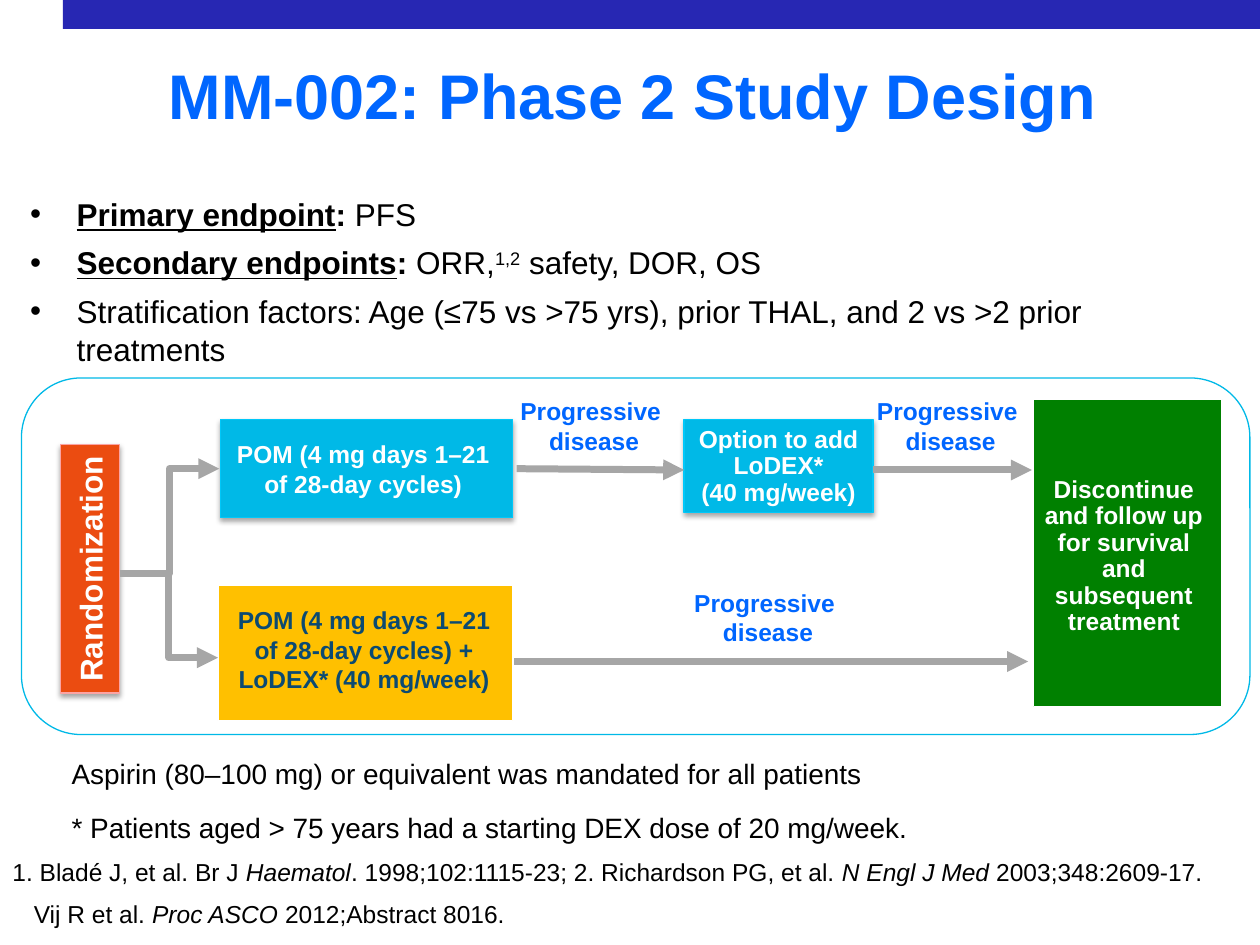
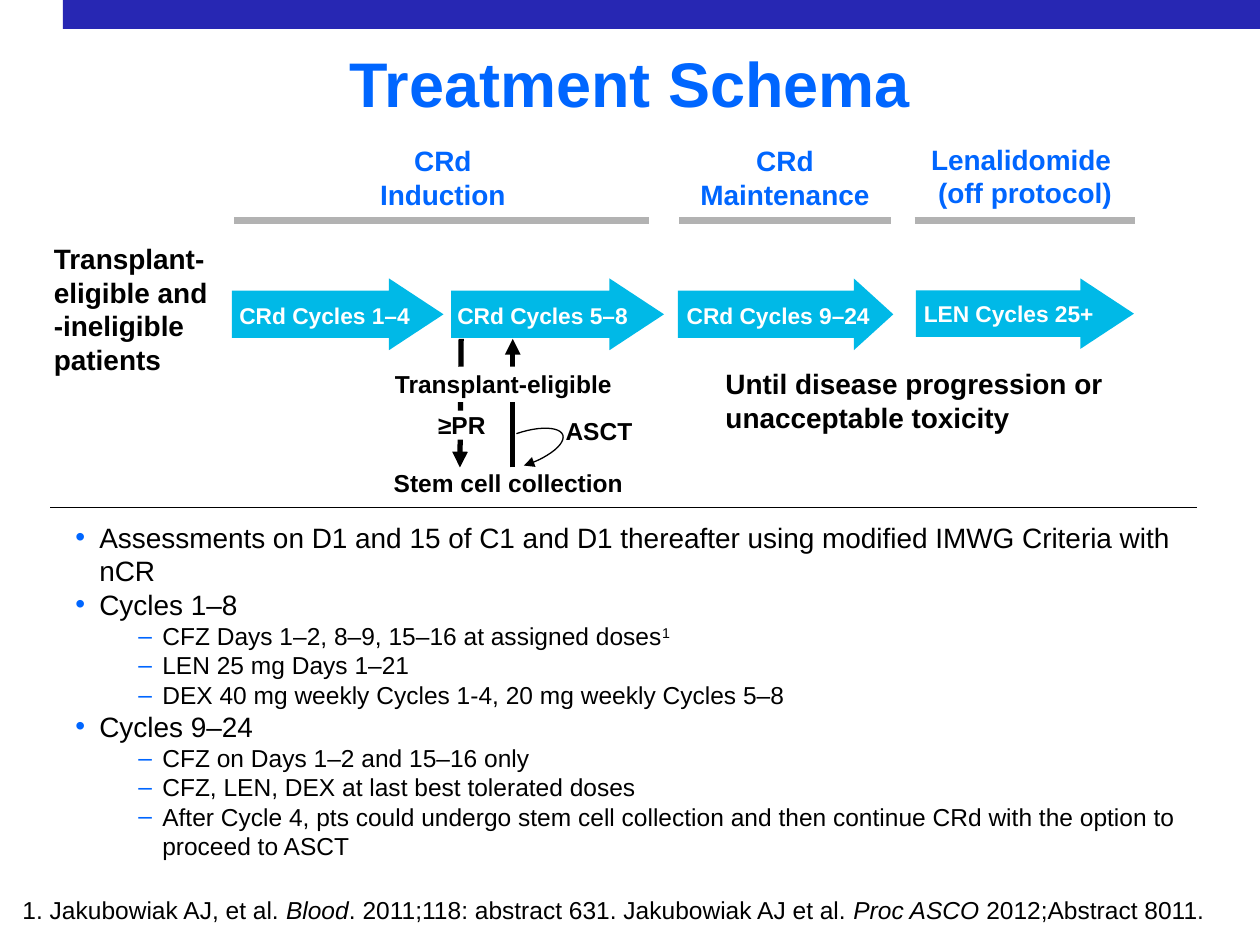
"""Build two slides on myeloma study designs."""
from lxml.etree import SubElement
from pptx import Presentation
from pptx.dml.color import RGBColor
from pptx.enum.shapes import MSO_CONNECTOR, MSO_SHAPE
from pptx.enum.text import MSO_ANCHOR, MSO_AUTO_SIZE, PP_ALIGN
from pptx.oxml.ns import qn
from pptx.util import Pt

SCALE = 9144
COLORS = {
    "band": "2727B3", "blue": "0066FF", "black": "000000", "white": "FFFFFF",
    "cyan": "00B9E7", "edge": "00C8F9", "red": "EB4C11", "pink": "FBA4A4",
    "green": "008000", "gold": "FFC000", "navy": "0B4A72", "gray": "A6A6A6",
    "rule": "B2B2B2",
}
ALIGNS = {"left": PP_ALIGN.LEFT, "center": PP_ALIGN.CENTER}
ANCHORS = {"top": MSO_ANCHOR.TOP, "middle": MSO_ANCHOR.MIDDLE, "bottom": MSO_ANCHOR.BOTTOM}
MARKS = {"b": "bold", "u": "underline", "i": "italic"}
PAD = (10, 5, 10, 5)


def emu(*sizes):
    """Turn px lengths into EMU."""
    return [size * SCALE for size in sizes]


def hue(name):
    """Look up a colour by name."""
    return RGBColor.from_string(COLORS[name])


class Deck:
    """Hold the style and the current slide."""

    def __init__(self):
        """Start an empty deck."""
        self.prs = Presentation()
        self.prs.slide_width, self.prs.slide_height = emu(1000, 750)
        self.slide = None

    def page(self, title, at):
        """Add a slide with its band and title."""
        self.slide = self.prs.slides.add_slide(self.prs.slide_layouts[5])
        self.shape((50, 0, 950, 23), "band")
        head = self.slide.shapes.title
        head.left, head.top, head.width, head.height = emu(*at)
        self.words(head, [title], size=36, color="blue", bold=True,
                   align="center", anchor="middle")

    def words(self, shape, paras, size=14, color="black", bold=False, align="left",
              anchor="top", pad=PAD, wrap=True, gap=0, lead=None, marks=None):
        """Fill a shape with paragraphs of text or marked runs."""
        frame = shape.text_frame
        sides = ("margin_left", "margin_top", "margin_right", "margin_bottom")
        form = dict(zip(sides, emu(*pad)), word_wrap=wrap,
                    auto_size=MSO_AUTO_SIZE.NONE, vertical_anchor=ANCHORS[anchor])
        for key, value in form.items():
            setattr(frame, key, value)
        for num, runs in enumerate(paras):
            para = frame.add_paragraph() if num else frame.paragraphs[0]
            level, glyph, left, hang, tint, points = marks[num] if marks else (0, "", 0, 0, "", size)
            if marks:
                self.bullet(para, glyph, left, hang, tint)
            form = {"level": level, "alignment": ALIGNS[align], "line_spacing": lead,
                    "space_before": Pt(gap if num else 0), "space_after": Pt(0)}
            for key, value in form.items():
                setattr(para, key, value)
            for text, flags in [(runs, "")] if isinstance(runs, str) else runs:
                self.run(para, text, flags, points, color, bold)

    def run(self, para, text, flags, size, color, bold):
        """Add one run, broken at each newline."""
        for num, part in enumerate(text.split("\n")):
            if num:
                para.add_line_break()
            run = para.add_run()
            run.text = part
            form = {"name": "Arial", "size": Pt(size), "bold": bold}
            form.update({MARKS[flag]: True for flag in flags if flag in MARKS})
            for key, value in form.items():
                setattr(run.font, key, value)
            run.font.color.rgb = hue(color)
            if "^" in flags:
                run._r.get_or_add_rPr().set("baseline", "30000")

    def bullet(self, para, glyph, left, hang, tint):
        """Set a hanging indent and its bullet."""
        props = para._p.get_or_add_pPr()
        props.set("marL", str(left * SCALE))
        props.set("indent", str(-hang * SCALE))
        if glyph:
            shade = SubElement(props, qn("a:buClr"))
            SubElement(shade, qn("a:srgbClr"), val=COLORS[tint])
            SubElement(props, qn("a:buFont"), typeface="Arial")
            SubElement(props, qn("a:buChar"), char=glyph)

    def text(self, at, paras, **form):
        """Add a text box."""
        self.words(self.slide.shapes.add_textbox(*emu(*at)), paras, **form)

    def shape(self, at, fill=None, edge=None, kind=MSO_SHAPE.RECTANGLE, adjust=(),
              shade=False, paras=None, **form):
        """Add a preset shape, with text if given."""
        item = self.slide.shapes.add_shape(kind, *emu(*at))
        item.shadow.inherit = False
        if fill:
            item.fill.solid()
            item.fill.fore_color.rgb = hue(fill)
        else:
            item.fill.background()
        if edge:
            item.line.color.rgb = hue(edge)
            item.line.width = Pt(0.75)
        else:
            item.line.fill.background()
        for num, value in enumerate(adjust):
            item.adjustments[num] = value
        if shade:
            self.shade(item)
        if paras:
            self.words(item, paras, **form)
        return item

    def shade(self, item):
        """Drop a soft shadow below a shape."""
        effects = item.element.spPr.find(qn("a:effectLst"))
        drop = SubElement(effects, qn("a:outerShdw"), blurRad=str(Pt(3.1)),
                          dist=str(Pt(1.8)), dir="5400000", rotWithShape="0")
        tone = SubElement(drop, qn("a:srgbClr"), val=COLORS["black"])
        SubElement(tone, qn("a:alpha"), val="35000")

    def line(self, ends, color, width, arrow=False, kind=MSO_CONNECTOR.STRAIGHT):
        """Add a line, or an arrow to its end."""
        item = self.slide.shapes.add_connector(kind, *emu(*ends))
        item.line.color.rgb = hue(color)
        item.line.width = Pt(width)
        props = item.element.spPr
        if arrow:
            SubElement(props.find(qn("a:ln")), qn("a:tailEnd"), type="triangle")
        SubElement(props, qn("a:effectLst"))


def study(deck):
    """Draw the phase 2 study design."""
    deck.page("MM-002: Phase 2 Study Design", (40, 23, 924, 103))
    deck.text((14, 150, 978, 500), [
        [("Primary endpoint", "bu"), (": ", "b"), ("PFS", "")],
        [("Secondary endpoints", "bu"), (": ", "b"), ("ORR,", ""), ("1,2", "^"),
         (" safety, DOR, OS", "")],
        "Stratification factors: Age (≤75 vs >75 yrs), prior THAL, and 2 vs >2 prior treatments",
    ], gap=6, marks=[(0, "•", 37, 37, "black", 18)] * 3)
    deck.text((47, 594, 922, 81), [
        "Aspirin (80–100 mg) or equivalent was mandated for all patients",
        "* Patients aged > 75 years had a starting DEX dose of 20 mg/week.",
    ], size=16, anchor="bottom", gap=12)

    label = {"bold": True, "align": "center", "anchor": "middle"}
    light = {**label, "color": "white"}
    start = deck.shape((48, 353, 47, 197), "red", "pink", shade=True,
                       paras=["Randomization"], size=18, wrap=False, **light)
    start.text_frame._txBody.bodyPr.set("vert", "vert270")
    deck.shape((543, 333, 150, 74), "cyan", "edge", shade=True, lead=0.9,
               paras=["Option to add LoDEX*\n(40 mg/week)"], **{**light, "anchor": "bottom"})
    deck.shape((820, 317, 150, 244), "green", "white", lead=0.9, pad=(5, 10, 11, 5),
               paras=["Discontinue and follow up for survival and subsequent treatment"], **light)
    deck.shape((173, 465, 234, 107), "gold", "white", color="navy", pad=(9, 5, 11, 11),
               paras=["POM (4 mg days 1–21 of 28-day cycles) + LoDEX* (40 mg/week)"], **label)
    deck.shape((175, 333, 232, 78), "cyan", "edge", shade=True, wrap=False,
               paras=["POM (4 mg days 1–21 \nof 28-day cycles) "], **light)
    for left, top in ((402, 309), (540, 461), (685, 309)):
        deck.text((left, top, 139, 57), ["Progressive \ndisease"], color="blue",
                  **{**label, "anchor": "bottom"})

    for right, bottom in ((174, 372), (173, 522)):
        deck.line((95, 455, right, bottom), "gray", 4, True, MSO_CONNECTOR.ELBOW)
    for ends in ((408, 525, 816, 525), (410, 372, 543, 373), (693, 373, 819, 373)):
        deck.line(ends, "gray", 4, True)
    deck.shape((17, 300, 975, 283), edge="cyan", kind=MSO_SHAPE.ROUNDED_RECTANGLE)
    deck.text((0, 675, 988, 34), [[
        ("1. Bladé J, et al. Br J ", ""), ("Haematol", "i"),
        (". 1998;102:1115-23; 2. Richardson PG, et al. ", ""),
        ("N Engl J Med ", "i"), ("2003;348:2609-17.", "")]])
    deck.text((17, 708, 700, 34), [[
        ("Vij R et al. ", ""), ("Proc ASCO ", "i"), ("2012;Abstract 8016.", "")]],
        anchor="bottom")


def schema(deck):
    """Draw the treatment schema."""
    deck.page("Treatment Schema", (50, 13, 900, 104))
    bold = {"bold": True, "anchor": "middle"}
    mid = {**bold, "align": "center"}
    tight = {**mid, "pad": (0, 0, 0, 0)}
    cycle = {"size": 13, "color": "white"}
    deck.line((407, 371, 407, 269), "black", 3, True)
    deck.line((366, 269, 365, 371), "black", 3, True)

    for left, width, tip, name, start, span in (
            (184, 168, 0.76, "CRd Cycles 1–4", 189, 137),
            (358, 169, 0.76, "CRd Cycles 5–8", 362, 137),
            (538, 171, 0.55, "CRd Cycles 9–24", 544, 147)):
        deck.shape((left, 221, width, 57), "cyan", kind=MSO_SHAPE.RIGHT_ARROW, adjust=(0.66, tip))
        deck.text((start, 239, span, 22), [name], wrap=False, **cycle, **tight)
    deck.shape((727, 221, 173, 56), "cyan", kind=MSO_SHAPE.RIGHT_ARROW, adjust=(0.66, 0.76),
               paras=["LEN Cycles 25+"], pad=(2, 5, 0, 5), **cycle, **mid)

    for left, width, top, paras, start, end in (
            (120, 463, 109, ["CRd", "Induction"], 186, 515),
            (545, 156, 109, ["CRd", "Maintenance"], 539, 707),
            (731, 165, 108, ["Lenalidomide ", "(off protocol)"], 726, 901)):
        deck.text((left, top, width, 64), paras, size=16, color="blue", bold=True,
                  align="center", wrap=False)
        deck.line((start, 175, end, 175), "rule", 4.5)

    deck.text((312, 371, 183, 24), ["Stem cell collection"], wrap=False, **tight)
    deck.shape((337, 326, 59, 23), "white", paras=["≥PR"], **tight)
    deck.shape((439, 330, 136, 23), "white", paras=["ASCT"], pad=(10, 0, 10, 0),
               wrap=False, **bold)
    curve = deck.shape((401, 322, 26, 69), edge="black", kind=MSO_SHAPE.ARC, adjust=(101.36, 0))
    curve.rotation = 251.1
    curve.element.spPr.find(qn("a:xfrm")).set("flipV", "1")
    SubElement(curve.element.spPr.find(qn("a:ln")), qn("a:headEnd"), type="triangle")
    deck.shape((292, 291, 215, 28), "white", paras=["Transplant-eligible"],
               pad=(10, 2, 10, 2), bold=True, align="center")

    main, sub = (0, "•", 19, 19, "blue", 16), (1, "–", 69, 19, "blue", 14)
    deck.text((50, 408, 920, 289), [
        "Assessments on D1 and 15 of C1 and D1 thereafter using modified IMWG Criteria with nCR",
        "Cycles 1–8",
        [("CFZ Days 1–2, 8–9, 15–16 at assigned doses", ""), ("1", "^")],
        "LEN 25 mg Days 1–21",
        "DEX 40 mg weekly Cycles 1-4, 20 mg weekly Cycles 5–8",
        "Cycles 9–24",
        "CFZ on Days 1–2 and 15–16 only",
        "CFZ, LEN, DEX at last best tolerated doses",
        "After Cycle 4, pts could undergo stem cell collection and then continue CRd "
        "with the option to proceed to ASCT",
    ], marks=[main, main, sub, sub, sub, main, sub, sub, sub])
    deck.text((566, 286, 344, 64), ["Until disease progression or unacceptable toxicity"],
              size=16, bold=True)
    deck.line((40, 403, 950, 403), "black", 0.75)
    deck.text((8, 708, 959, 33), [[
        ("1. Jakubowiak AJ, et al. ", ""), ("Blood", "i"),
        (". 2011;118: abstract 631. Jakubowiak AJ et al. ", ""),
        ("Proc ASCO ", "i"), ("2012;Abstract 8011.", "")]],
        lead=0.9, marks=[(0, "", 50, 50, "", 14)])
    deck.text((33, 186, 187, 118), ["Transplant-eligible and \n-ineligible patients"],
              size=16, **bold)


def main():
    """Build and save the deck."""
    deck = Deck()
    study(deck)
    schema(deck)
    deck.prs.save("out.pptx")


if __name__ == "__main__":
    main()
